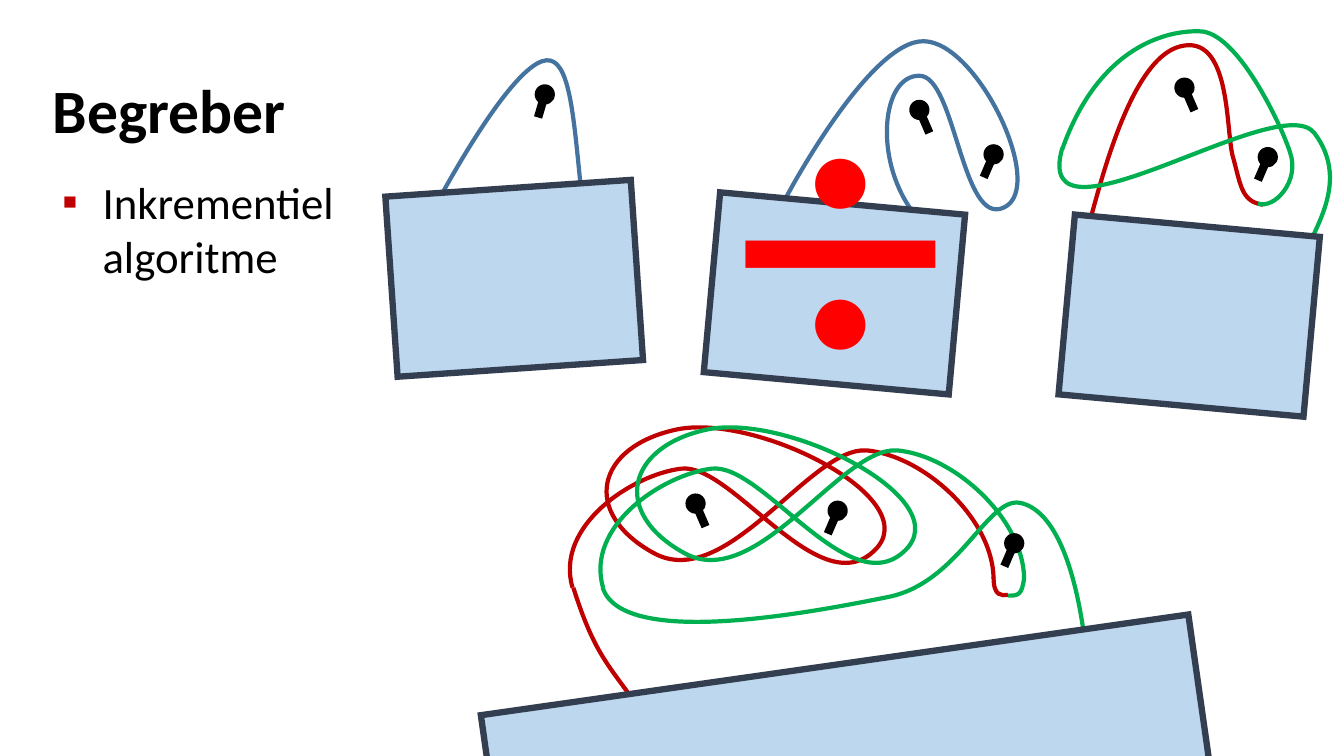
import pptx
import pptx.util
import pptx.dml.color
import pptx.enum.shapes
import pptx.enum.text
import pptx.oxml.ns
import lxml.etree

Cm, Pt = pptx.util.Cm, pptx.util.Pt
qn = pptx.oxml.ns.qn
COLORS = {"black": "000000", "wall": "BDD7EE", "frame": "333F50", "blue": "43739E",
          "red": "C00000", "green": "00B050", "sign": "FF0000"}


def rgb(name):
    return pptx.dml.color.RGBColor.from_string(COLORS[name])


def style(font, color, **values):
    for name, value in values.items():
        setattr(font, name, value)
    font.color.rgb = rgb(color)


prs = pptx.Presentation()
prs.slide_width, prs.slide_height = Cm(33.87), Cm(19.05)
s = prs.slides.add_slide(prs.slide_layouts[1])

# Title and bullet list
title, body = s.shapes.title, s.placeholders[1]
for sp, box in ((title, (1.08, 1.02, 12.93, 3.68)), (body, (1.08, 4.27, 14.78, 8.46))):
    sp.left, sp.top, sp.width, sp.height = map(Cm, box)
    sp.text_frame.auto_size = pptx.enum.text.MSO_AUTO_SIZE.NONE

title.text_frame.vertical_anchor = pptx.enum.text.MSO_ANCHOR.MIDDLE
p = title.text_frame.paragraphs[0]
p.text = "Begreber"
p.alignment = pptx.enum.text.PP_ALIGN.LEFT
p.line_spacing = 0.9
style(p.runs[0].font, "black", name="Calibri", size=Pt(44), bold=True)

p = body.text_frame.paragraphs[0]
p.text = "Inkrementiel\valgoritme"
for r in p.runs:
    style(r.font, "black", name="Calibri", size=Pt(32))
pPr = p._p.get_or_add_pPr()
pPr.set("marL", str(Cm(1.25)))
pPr.set("indent", str(Cm(-1.02)))
bullet_color = lxml.etree.SubElement(pPr, qn("a:buClr"))
lxml.etree.SubElement(bullet_color, qn("a:srgbClr"), val=COLORS["red"])
lxml.etree.SubElement(pPr, qn("a:buFont"), typeface="Arial")
lxml.etree.SubElement(pPr, qn("a:buChar"), char="▪")

# Strings: a start point, then three points per Bézier segment (cm)
double_loop = [
    (14.43, 14.81), (13.97, 13.26), (15.93, 11.96), (17.17, 11.81),
    (18.44, 11.66), (20.62, 15.21), (22.02, 13.89),
    (23.42, 12.6), (19.1, 10.41), (17.07, 10.82),
    (15.01, 11.25), (14.63, 12.93), (16.48, 13.94),
    (18.31, 14.94), (20.42, 11.25), (21.84, 11.35),
    (23.27, 11.48), (25.02, 13.06), (25.04, 14.58)]
strings = [
    # One nail
    ("blue", [(11.13, 4.9), (12.12, 3.12), (13.18, 1.57), (13.77, 1.52),
              (14.35, 1.47), (14.45, 2.87), (14.63, 4.65)]),
    # Two nails, wrong solution
    ("blue", [(22.96, 5.28), (22.02, 3.96), (22.23, 1.91), (23.16, 1.91),
              (24.08, 1.88), (24.23, 5.74), (25.3, 5.23),
              (26.39, 4.72), (24.64, 1.07), (23.29, 1.04),
              (21.92, 0.99), (19.79, 5), (19.81, 4.98)]),
    # Two nails, right solution
    ("red", [(27.38, 5.89), (27.69, 4.8), (28.45, 1.5), (29.74, 1.17),
             (31.01, 0.84), (30.89, 3.2), (31.06, 3.91),
             (31.27, 4.65), (31.27, 5.08), (31.83, 5.16)]),
    ("green", [(26.77, 3.76), (27.64, 1.3), (29.26, 0.76), (30.23, 0.79),
               (31.17, 0.79), (32.28, 3.12), (32.51, 3.84),
               (32.77, 4.57), (32.11, 5.28), (31.7, 5.13)]),
    ("green", [(26.77, 3.73), (25.96, 6.58), (32.23, 2.21), (33.12, 3.35),
               (34.01, 4.52), (33.15, 5.69), (32.94, 6.3)]),
    # Three nails
    ("red", double_loop),
    ("green", [(x + 0.77, y) for x, y in double_loop]),
    ("red", [(25.04, 14.55), (25.04, 15.04), (25.25, 15.01), (25.4, 14.99)]),
    ("green", [(25.81, 14.55), (25.76, 15.01), (25.65, 15.01), (25.4, 15.01)]),
    ("green", [(15.19, 14.81), (15.7, 16.38), (20.65, 15.39), (22.4, 15.04),
               (24.16, 14.68), (24.89, 12.52), (25.7, 12.67),
               (26.52, 12.83), (27.05, 14.12), (27.31, 15.93)]),
    ("red", [(14.45, 14.81), (14.94, 16.36), (15.29, 16.71), (15.88, 17.53)]),
]
STEPS = 24
for color, knots in strings:
    # Points along the curve give the shape its exact bounds
    points = []
    for i in range(0, len(knots) - 1, 3):
        for step in range(1, STEPS + 1):
            t = step / STEPS
            weights = ((1 - t) ** 3, 3 * t * (1 - t) ** 2, 3 * t * t * (1 - t), t ** 3)
            points.append([Cm(sum(w * k[axis] for w, k in zip(weights, knots[i:i + 4])))
                           for axis in (0, 1)])
    fb = s.shapes.build_freeform(Cm(knots[0][0]), Cm(knots[0][1]))
    fb.add_line_segments(points, close=False)
    sp = fb.convert_to_shape()
    # Bézier segments replace the straight ones
    outline = next(sp._element.iter(qn("a:path")))
    for line in outline.findall(qn("a:lnTo")):
        outline.remove(line)
    for i in range(1, len(knots), 3):
        curve = lxml.etree.SubElement(outline, qn("a:cubicBezTo"))
        for x, y in knots[i:i + 3]:
            lxml.etree.SubElement(curve, qn("a:pt"), x=str(Cm(x) - sp.left),
                                  y=str(Cm(y) - sp.top))
    sp.shadow.inherit = False
    sp.fill.background()
    sp.line.color.rgb = rgb(color)
    sp.line.width = Pt(3)

# Nails: head centre and sideways lean of the shaft (cm)
HEAD, SHAFT = 0.51, 0.58
nails = [(13.73, 2.38, -0.17), (25.04, 3.89, -0.25), (23.17, 2.77, 0.25),
         (31.95, 3.96, -0.25), (29.85, 2.21, 0.25), (17.53, 12.69, 0.25),
         (21.11, 12.87, -0.25), (25.56, 13.69, -0.25)]
for x, y, lean in nails:
    sp = s.shapes.add_shape(pptx.enum.shapes.MSO_SHAPE.OVAL, Cm(x - HEAD / 2),
                            Cm(y - HEAD / 2), Cm(HEAD), Cm(HEAD))
    sp.shadow.inherit = False
    sp.fill.solid()
    sp.fill.fore_color.rgb = rgb("black")
    sp.line.fill.background()
    shaft = s.shapes.add_connector(pptx.enum.shapes.MSO_CONNECTOR.STRAIGHT,
                                   Cm(x + lean), Cm(y + SHAFT), Cm(x), Cm(y))
    shaft.line.color.rgb = rgb("black")
    shaft.line.width = Pt(6)
    lxml.etree.SubElement(shaft._element.spPr, qn("a:effectLst"))

# Hanging frames: left, top, width, rotation
for x, y, width, rotation in ((9.86, 4.74, 6.2, -3.9), (17.93, 5.12, 6.2, 5.2),
                              (26.87, 5.68, 6.2, 5.2), (12.35, 16.73, 18.01, -8.1)):
    sp = s.shapes.add_shape(pptx.enum.shapes.MSO_SHAPE.RECTANGLE,
                            Cm(x), Cm(y), Cm(width), Cm(4.55))
    sp.rotation = rotation
    sp.shadow.inherit = False
    sp.fill.solid()
    sp.fill.fore_color.rgb = rgb("wall")
    sp.line.color.rgb = rgb("frame")
    sp.line.width = Pt(4.5)
    ln = sp._element.spPr.find(qn("a:ln"))
    lxml.etree.SubElement(ln, qn("a:miter"), lim="800000")

# Division sign over the second frame
tf = s.shapes.add_textbox(Cm(18.31), Cm(-0.94), Cm(4.11), Cm(13.08)).text_frame
tf.word_wrap = True
tf.auto_size = pptx.enum.text.MSO_AUTO_SIZE.SHAPE_TO_FIT_TEXT
r = tf.paragraphs[0].add_run()
r.text = "÷"
style(r.font, "sign", name="Calibri", size=Pt(300))

prs.save("out.pptx")
